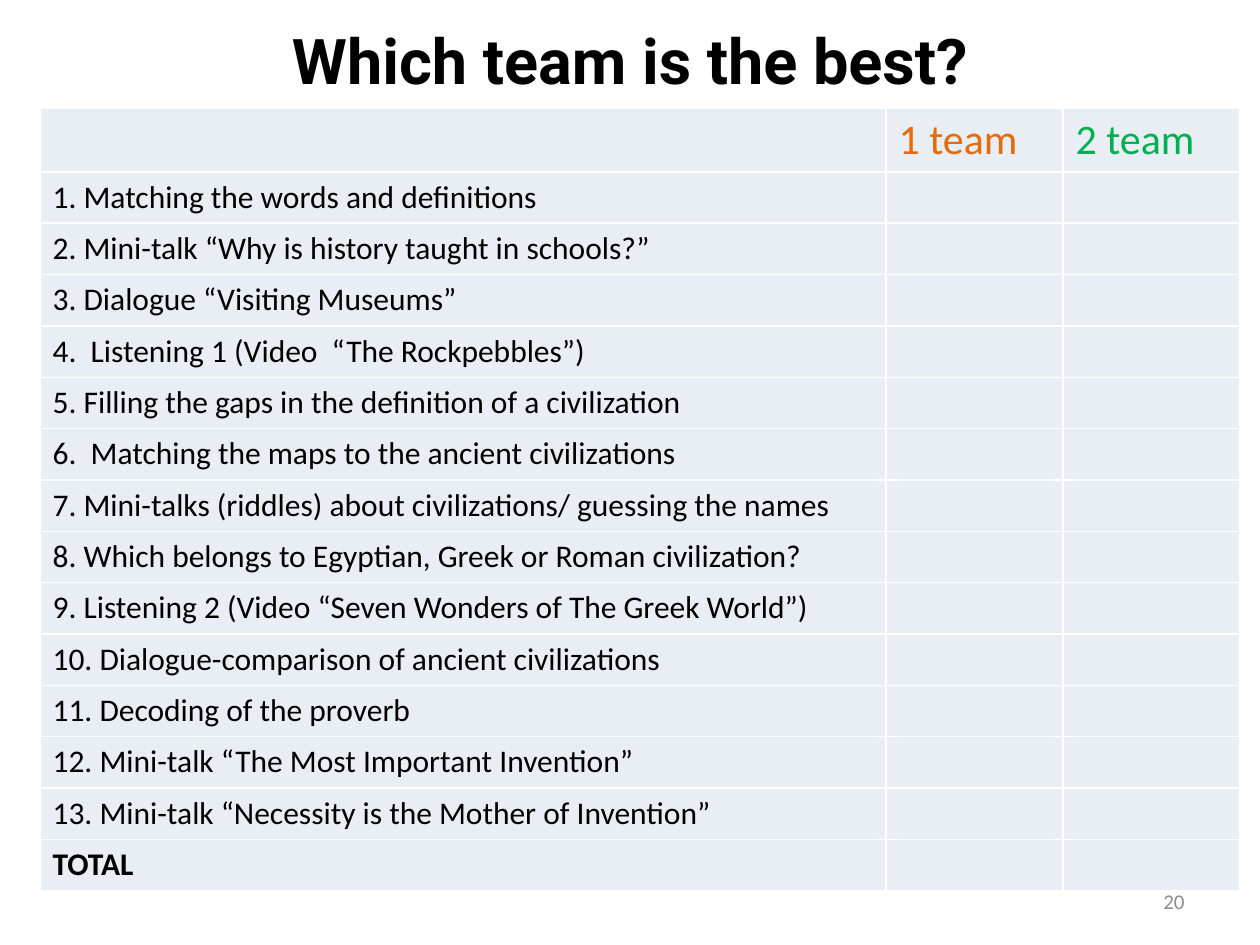
from pptx import Presentation
from pptx.dml.color import RGBColor
from pptx.enum.text import MSO_ANCHOR as Anchor, PP_ALIGN as Align
from pptx.util import Pt

SCALE = 914400 // 126


def px(length):
    return length * SCALE


def style(paragraph, size, color, name="Calibri", bold=False):
    font = paragraph.font
    font.size = Pt(size)
    font.name = name
    font.bold = bold
    font.color.rgb = RGBColor.from_string(color)


TASKS = [
    "1. Matching the words and definitions",
    "2. Mini-talk “Why is history taught in schools?”",
    "3. Dialogue “Visiting Museums”",
    "4.  Listening 1 (Video  “The Rockpebbles”)",
    "5. Filling the gaps in the definition of a civilization",
    "6.  Matching the maps to the ancient civilizations",
    "7. Mini-talks (riddles) about civilizations/ guessing the names",
    "8. Which belongs to Egyptian, Greek or Roman civilization?",
    "9. Listening 2 (Video “Seven Wonders of The Greek World”)",
    "10. Dialogue-comparison of ancient civilizations",
    "11. Decoding of the proverb",
    "12. Mini-talk “The Most Important Invention”",
    "13. Mini-talk “Necessity is the Mother of Invention”",
    "TOTAL",
]
TEAMS = [("1 team", "E46C0A"), ("2 team", "00B050")]
COLUMN_WIDTHS = [846, 177, 177]
HEADER_HEIGHT = 63
BODY_HEIGHT = 719

deck = Presentation()
deck.slide_width = px(1260)
deck.slide_height = px(945)
page = deck.slides.add_slide(deck.slide_layouts[5])

title = page.shapes.title
title.left, title.top, title.width, title.height = px(63), px(0), px(1134), px(118)
title.text_frame.text = "Which team is the best?"
title.text_frame.vertical_anchor = Anchor.MIDDLE
heading = title.text_frame.paragraphs[0]
heading.alignment = Align.CENTER
style(heading, 36, "000000", "Roboto", True)

table = page.shapes.add_table(
    len(TASKS) + 1, len(COLUMN_WIDTHS), px(40), px(108),
    px(sum(COLUMN_WIDTHS)), px(HEADER_HEIGHT + BODY_HEIGHT),
).table
table.first_row = False
table.horz_banding = False
for column, width in zip(table.columns, COLUMN_WIDTHS):
    column.width = px(width)
for row in table.rows:
    row.height = px(BODY_HEIGHT) // len(TASKS)
table.rows[0].height = px(HEADER_HEIGHT)

for cell in table.iter_cells():
    cell.fill.solid()
    cell.fill.fore_color.rgb = RGBColor.from_string("E9EDF4")

for index, (team, color) in enumerate(TEAMS, start=1):
    cell = table.cell(0, index)
    cell.text = team
    style(cell.text_frame.paragraphs[0], 24, color)

for index, task in enumerate(TASKS, start=1):
    cell = table.cell(index, 0)
    cell.text = task
    style(cell.text_frame.paragraphs[0], 18, "000000", bold=task == "TOTAL")

number_box = page.shapes.add_textbox(px(903), px(876), px(294), px(50))
number_box.text_frame.word_wrap = True
number_box.text_frame.vertical_anchor = Anchor.MIDDLE
number_box.text_frame.text = "20"
number = number_box.text_frame.paragraphs[0]
number.alignment = Align.RIGHT
style(number, 12, "8C8C8C")

deck.save("out.pptx")
